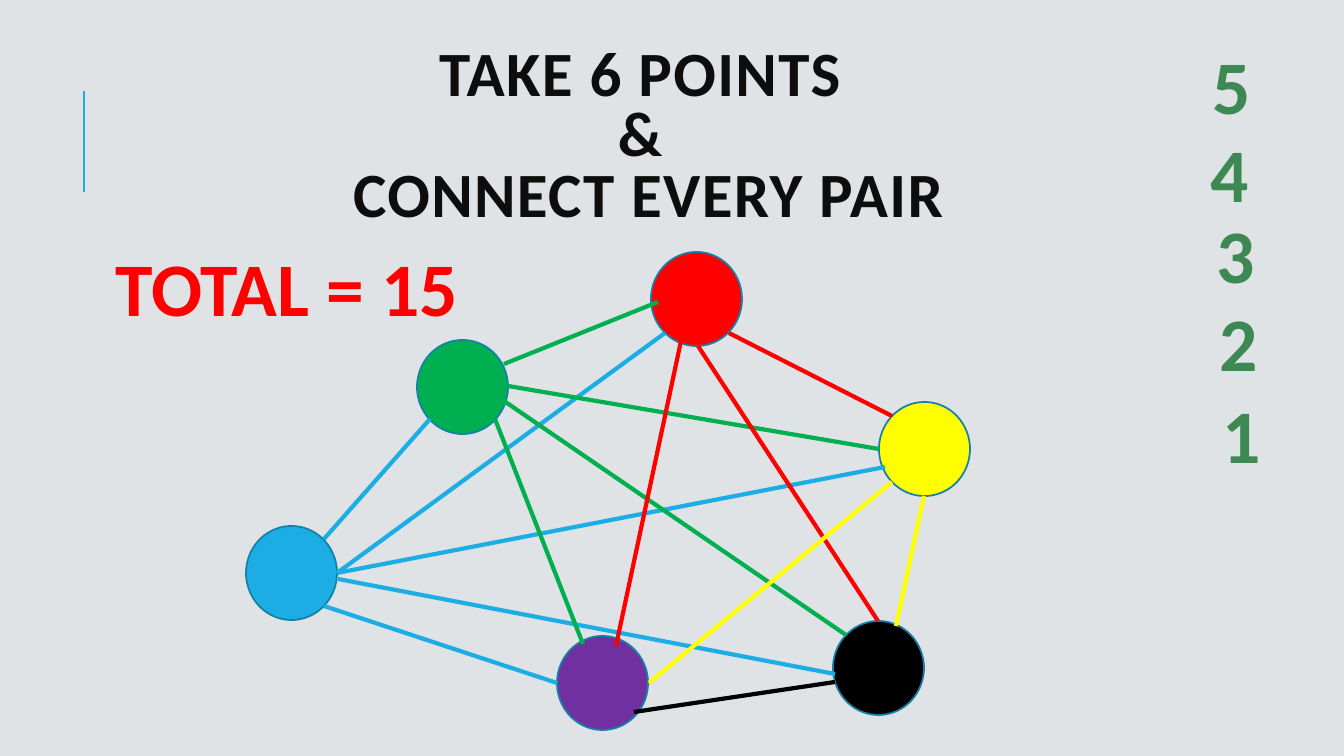
from lxml.etree import SubElement
from pptx import Presentation
from pptx.dml.color import RGBColor
from pptx.enum.shapes import MSO_CONNECTOR, MSO_SHAPE
from pptx.enum.text import MSO_ANCHOR, PP_ALIGN
from pptx.oxml.ns import qn
from pptx.util import Pt

PX = 914400 / 100.8
FONT = "Calibri"
COLORS = {
    "background": "DFE3E5", "title": "0D0D0D", "count": "3E8853", "rim": "1580A9",
    "blue": "1CADE4", "green": "00B050", "red": "FF0000",
    "yellow": "FFFF00", "purple": "7030A0", "black": "000000",
}
POINT_SIZE = (91, 94)
POINTS = {
    "green": (171, 88), "blue": (0, 274), "red": (405, 0),
    "yellow": (633, 150), "purple": (311, 384), "black": (587, 369),
}
EDGES = {
    "blue": [(78, 287, 184, 167), (78, 354, 311, 431), (91, 321, 419, 81),
             (91, 321, 639, 215), (92, 327, 589, 422)],
    "green": [(258, 112, 412, 50), (262, 134, 633, 197),
              (258, 149, 600, 383), (249, 167, 337, 392)],
    "red": [(483, 81, 646, 164), (452, 94, 632, 369), (435, 89, 370, 394)],
    "yellow": [(678, 244, 650, 374), (646, 230, 403, 431)],
    "black": [(589, 430, 388, 460)],
}
COUNTS = [("5", 2, 0), ("4", 0, 88), ("3", 6, 169), ("2", 9, 257), ("1", 12, 349)]


def px(*lengths):
    """Turn pixel lengths into EMU."""
    return [round(length * PX) for length in lengths]


def color(name):
    """Look up a named colour."""
    return RGBColor.from_string(COLORS[name])


def add_line(page, ends, name, width):
    """Draw a straight line without a shadow."""
    line = page.shapes.add_connector(MSO_CONNECTOR.STRAIGHT, *px(*ends))
    line.line.color.rgb = color(name)
    line.line.width = Pt(width)
    SubElement(line._element.spPr, qn("a:effectLst"))


def add_text(page, box, lines, size, name, wrap=False):
    """Place centred bold lines in a box and return their paragraph."""
    frame = page.shapes.add_textbox(*px(*box)).text_frame
    frame.word_wrap = wrap
    frame.vertical_anchor = MSO_ANCHOR.TOP
    para = frame.paragraphs[0]
    para.alignment = PP_ALIGN.CENTER
    for index, text in enumerate(lines):
        if index:
            para.add_line_break()
        span = para.add_run()
        span.text = text
        span.font.name = FONT
        span.font.size = Pt(size)
        span.font.bold = True
        span.font.color.rgb = color(name)
    return para


def add_title(page, box):
    """Set the three-line title and the accent rule left of it."""
    left, top, width, height = box
    add_line(page, (left - 29, top + 168, left - 29, top + 67), "blue", 1.5)
    lines = ["TAKE 6 POINTS ", "& ", "CONNECT EVERY PAIR"]
    para = add_text(page, (left, top + 19, width, height), lines, 45, "title", True)
    para.line_spacing = 0.8
    for span in para.runs:
        span.font._element.set("spc", "100")


def add_graph(page, box):
    """Draw the six points and the lines joining every pair."""
    left, top = box[:2]
    for name, (across, down) in POINTS.items():
        point = page.shapes.add_shape(
            MSO_SHAPE.OVAL, *px(left + across, top + down, *POINT_SIZE))
        point.shadow.inherit = False
        point.fill.solid()
        point.fill.fore_color.rgb = color(name)
        point.line.color.rgb = color("rim")
        point.line.width = Pt(1.25)
    for name, edges in EDGES.items():
        for x1, y1, x2, y2 in edges:
            add_line(page, (left + x1, top + y1, left + x2, top + y2), name, 3)


def add_counts(page, box):
    """List the number of new lines drawn from each point."""
    left, top = box[:2]
    for text, across, down in COUNTS:
        add_text(page, (left + across, top + down, 69, 102), [text], 54, "count")


def add_total(page, box):
    """Show the total number of lines."""
    add_text(page, box, ["TOTAL = 15"], 54, "red")


def main():
    """Build and save the slide."""
    deck = Presentation()
    deck.slide_width, deck.slide_height = px(1344, 756)
    page = deck.slides.add_slide(deck.slide_layouts[6])
    page.background.fill.solid()
    page.background.fill.fore_color.rgb = color("background")
    add_title(page, (113, 24, 1071, 200))
    add_graph(page, (246, 252, 724, 478))
    add_counts(page, (1195, 34, 81, 451))
    add_total(page, (49, 236, 476, 102))
    deck.save("out.pptx")


if __name__ == "__main__":
    main()
